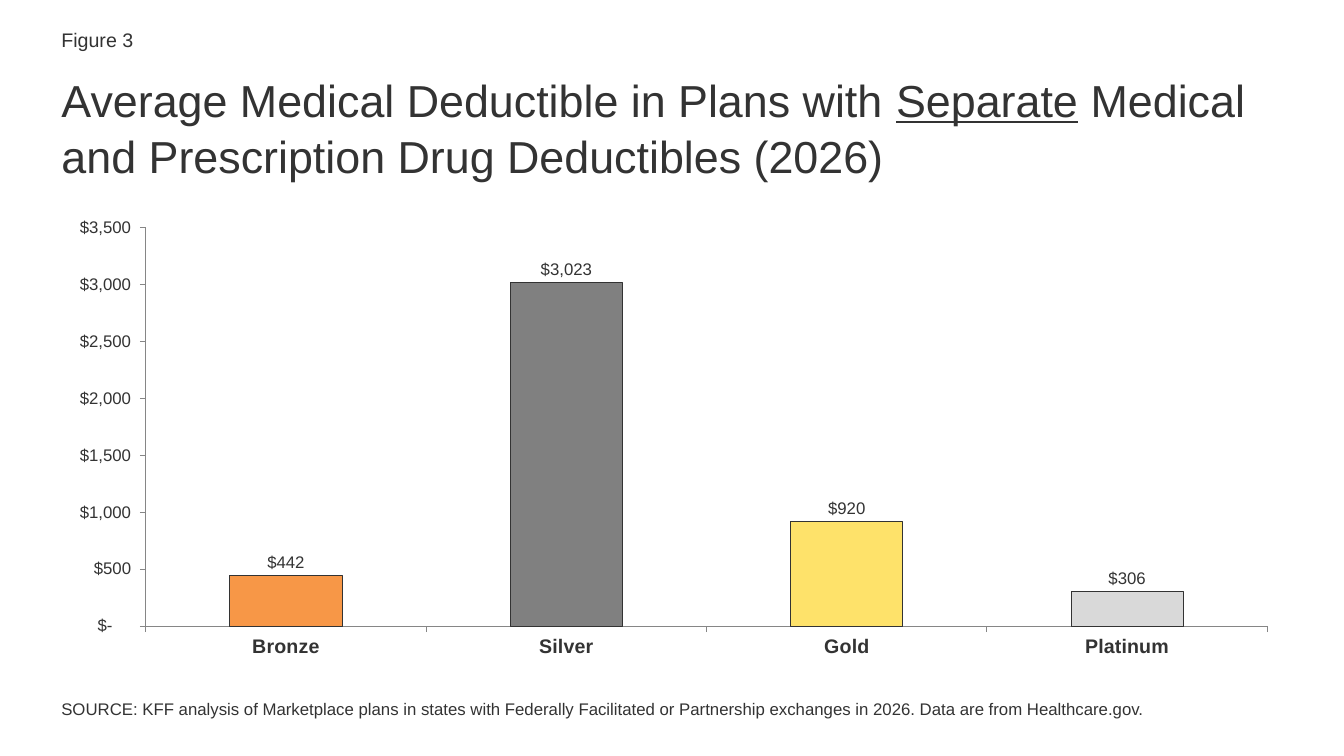
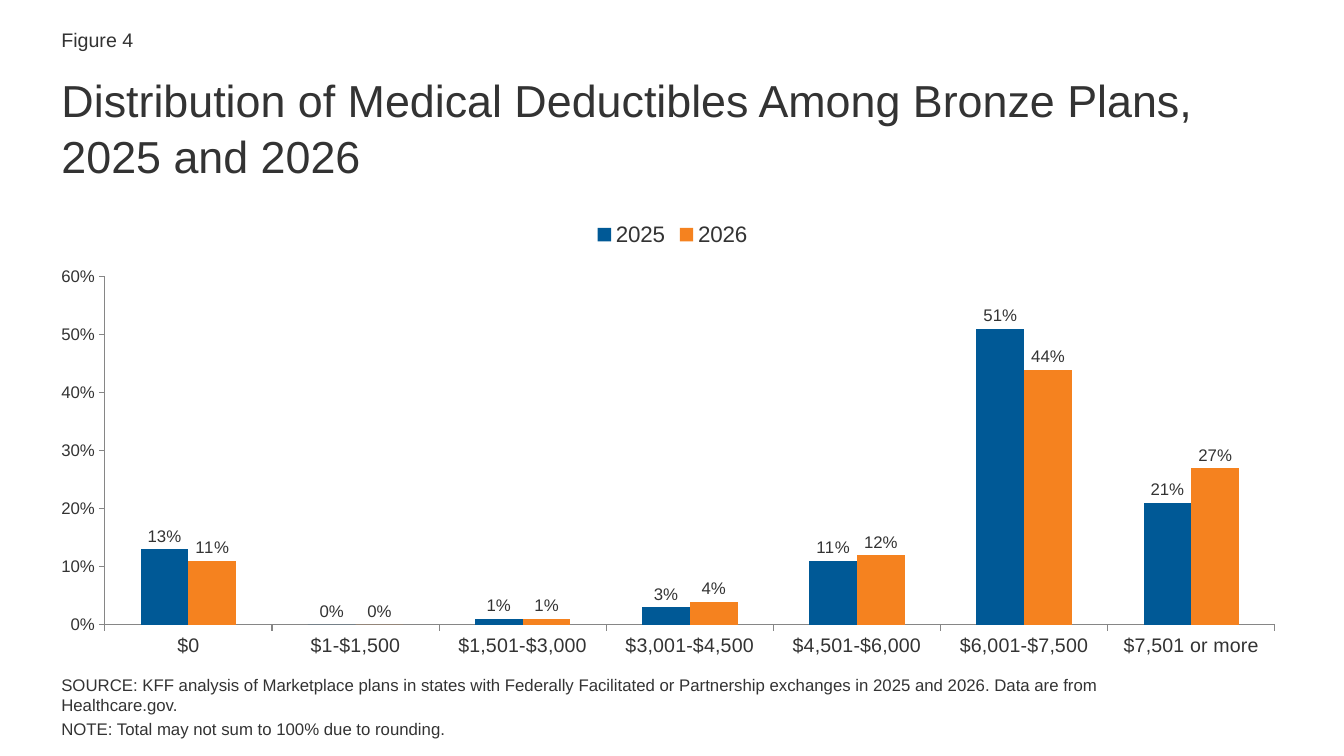
import pptx
import pptx.chart.data
import pptx.dml.color
import pptx.enum.chart
import pptx.enum.text
import pptx.util
from lxml import etree

Inches = pptx.util.Inches
Pt = pptx.util.Pt
enums = pptx.enum.chart
anchors = pptx.enum.text.MSO_ANCHOR

FONT = "Arial"
INK = "333333"
AXIS = "868686"
LEFT = 0.51
WIDE = 12.32
MONEY = r'_("$"* #,##0_);_("$"* \(#,##0\);_("$"* "-"??_);_(@_)'


def style(font, size, bold=False):
    font.name = FONT
    font.size = Pt(size)
    font.bold = bold
    font.color.rgb = color(INK)


def color(code):
    return pptx.dml.color.RGBColor.from_string(code)


pages = [
    {
        "label": "Figure 3",
        "title": [
            ("Average Medical Deductible in Plans with ", False),
            ("Separate", True),
            (" Medical and Prescription Drug Deductibles (2026)", False),
        ],
        "notes": [
            "SOURCE: KFF analysis of Marketplace plans in states with Federally "
            "Facilitated or Partnership exchanges in 2026. Data are from Healthcare.gov.",
        ],
        "top": 6.88,
        "cats": ["Bronze", "Silver", "Gold", "Platinum"],
        "series": [("Series 1", "003C64", [442, 3023, 920, 306])],
        "points": ["F79747", "808080", "FEE26A", "D9D9D9"],
        "format": MONEY,
        "max": 3500,
        "step": 500,
        "bold": True,
        "legend": False,
        "plot": {"x": 0.076, "y": 0.038, "w": 0.903, "h": 0.872},
    },
    {
        "label": "Figure 4",
        "title": [
            ("Distribution of Medical Deductibles Among Bronze Plans, 2025 and 2026", False),
        ],
        "notes": [
            "SOURCE: KFF analysis of Marketplace plans in states with Federally "
            "Facilitated or Partnership exchanges in 2025 and 2026. Data are from "
            "Healthcare.gov.",
            "NOTE: Total may not sum to 100% due to rounding.",
        ],
        "top": 6.64,
        "cats": ["$0", "$1-$1,500", "$1,501-$3,000", "$3,001-$4,500",
                 "$4,501-$6,000", "$6,001-$7,500", "$7,501 or more"],
        "series": [
            ("2025", "005996", [0.13, 0, 0.01, 0.03, 0.11, 0.51, 0.21]),
            ("2026", "F5821F", [0.11, 0, 0.01, 0.04, 0.12, 0.44, 0.27]),
        ],
        "points": [],
        "format": "0%",
        "max": 0.6,
        "step": 0.1,
        "bold": False,
        "legend": True,
        "plot": {"x": 0.043, "y": 0.145, "w": 0.942, "h": 0.762},
    },
]

deck = pptx.Presentation()
deck.slide_width = Inches(13.33)
deck.slide_height = Inches(7.5)

for page in pages:
    slide = deck.slides.add_slide(deck.slide_layouts[5])

    # Title
    title = slide.shapes.title
    title.left, title.top = Inches(LEFT), Inches(0.64)
    title.width, title.height = Inches(WIDE), Inches(0.94)
    frame = title.text_frame
    frame.word_wrap = True
    frame.auto_size = pptx.enum.text.MSO_AUTO_SIZE.NONE
    frame.vertical_anchor = anchors.TOP
    line = frame.paragraphs[0]
    line.alignment = pptx.enum.text.PP_ALIGN.LEFT
    line.line_spacing = 1.05
    for text, under in page["title"]:
        run = line.add_run()
        run.text = text
        style(run.font, 32)
        run.font.underline = under

    # Figure label and source notes
    boxes = [
        (0.22, 5.15, 0.35, anchors.MIDDLE, 14, [page["label"]]),
        (page["top"], 11.2, 7.39 - page["top"], anchors.TOP, 12, page["notes"]),
    ]
    for top, width, height, anchor, size, lines in boxes:
        box = slide.shapes.add_textbox(
            Inches(LEFT), Inches(top), Inches(width), Inches(height))
        frame = box.text_frame
        frame.word_wrap = True
        frame.vertical_anchor = anchor
        for i, text in enumerate(lines):
            line = frame.add_paragraph() if i else frame.paragraphs[0]
            if i:
                line.space_before = Pt(3)
            run = line.add_run()
            run.text = text
            style(run.font, size)

    # Chart
    data = pptx.chart.data.CategoryChartData(number_format=page["format"])
    data.categories = page["cats"]
    for name, fill, values in page["series"]:
        data.add_series(name, values)
    chart = slide.shapes.add_chart(
        enums.XL_CHART_TYPE.COLUMN_CLUSTERED, Inches(LEFT), Inches(2.09),
        Inches(WIDE), Inches(4.53), data).chart
    style(chart.font, 16)
    chart.has_title = False
    chart.has_legend = page["legend"]
    if page["legend"]:
        chart.legend.position = enums.XL_LEGEND_POSITION.TOP
        chart.legend.include_in_layout = False
        style(chart.legend.font, 16)

    for axis, size, bold in ((chart.category_axis, 14, page["bold"]),
                             (chart.value_axis, 12, False)):
        axis.has_major_gridlines = False
        axis.major_tick_mark = enums.XL_TICK_MARK.OUTSIDE
        axis.minor_tick_mark = enums.XL_TICK_MARK.NONE
        axis.format.line.color.rgb = color(AXIS)
        axis.format.line.width = Pt(0.75)
        style(axis.tick_labels.font, size, bold)
    axis.minimum_scale = 0
    axis.maximum_scale = page["max"]
    axis.major_unit = page["step"]
    axis.tick_labels.number_format = page["format"]
    axis.tick_labels.number_format_is_linked = False

    plot = chart.plots[0]
    plot.gap_width = 150
    plot.overlap = 0
    plot.vary_by_categories = False
    for bars, (name, fill, values) in zip(plot.series, page["series"]):
        bars.invert_if_negative = False
        bars.format.fill.solid()
        bars.format.fill.fore_color.rgb = color(fill)
        for i, tint in enumerate(page["points"]):
            look = bars.points[i].format
            look.fill.solid()
            look.fill.fore_color.rgb = color(tint)
            look.line.color.rgb = color(INK)
            look.line.width = Pt(0.75)
        labels = bars.data_labels
        labels.show_value = True
        labels.position = enums.XL_LABEL_POSITION.OUTSIDE_END
        labels.number_format = page["format"]
        labels.number_format_is_linked = False
        style(labels.font, 12)

    # Fixed inner plot area
    area = chart.element.chart.plotArea
    space = "{" + area.nsmap["c"] + "}"
    for old in area.findall(space + "layout"):
        area.remove(old)
    layout = etree.Element(space + "layout")
    area.insert(0, layout)
    manual = etree.SubElement(layout, space + "manualLayout")
    parts = {"layoutTarget": "inner", "xMode": "edge", "yMode": "edge", **page["plot"]}
    for tag, value in parts.items():
        etree.SubElement(manual, space + tag).set("val", str(value))

deck.save("out.pptx")
